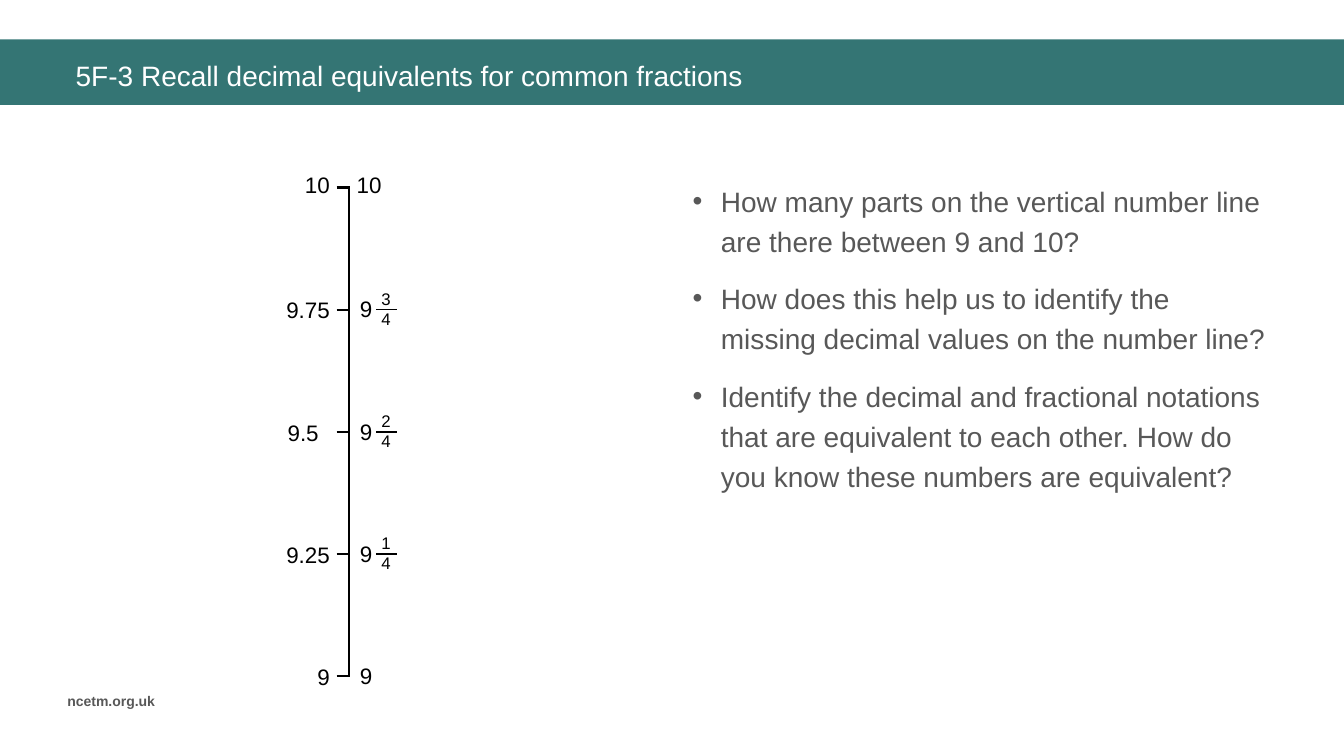
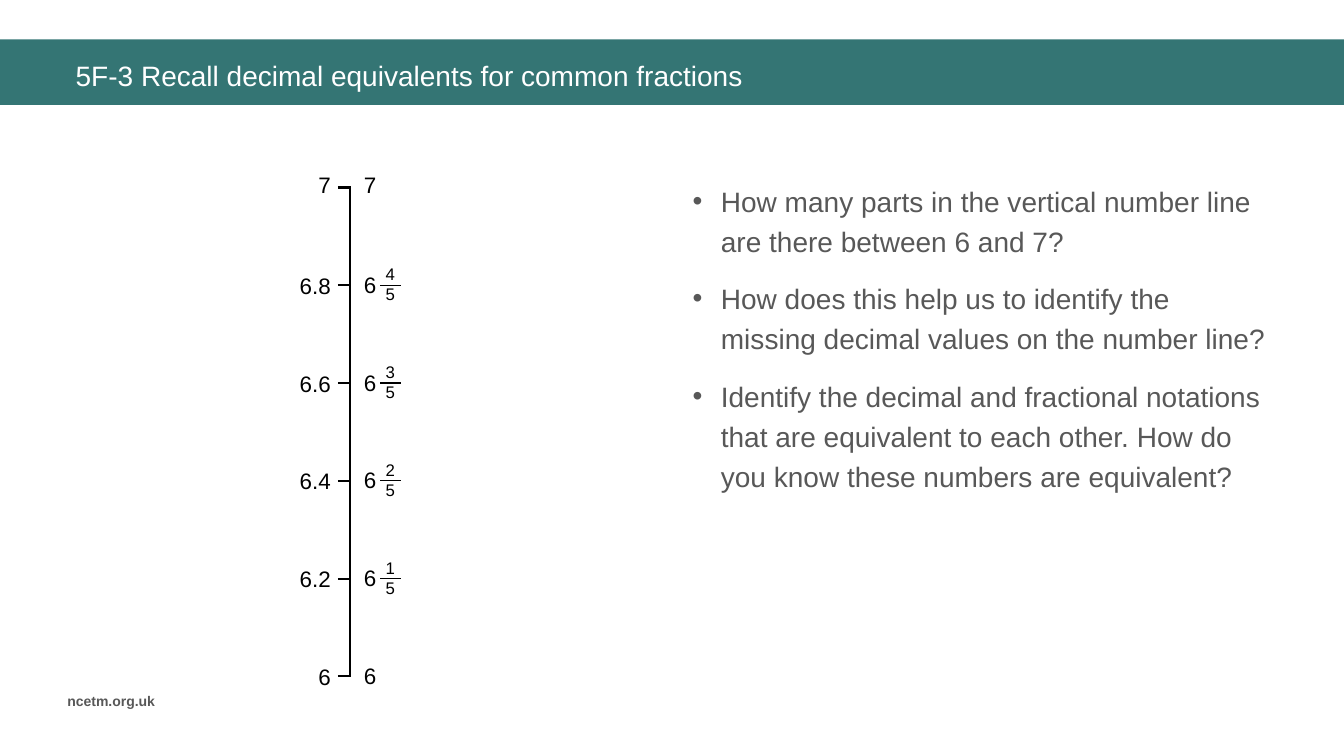
from lxml.etree import SubElement
from pptx import Presentation
from pptx.dml.color import RGBColor
from pptx.enum.shapes import MSO_CONNECTOR, MSO_SHAPE
from pptx.enum.text import MSO_ANCHOR, MSO_AUTO_SIZE, PP_ALIGN
from pptx.oxml.ns import qn
from pptx.util import Inches, Pt

TITLE = "5F-3 Recall decimal equivalents for common fractions"
FOOTER = "ncetm.org.uk"
SHARED_QUESTIONS = [
    "How does this help us to identify the missing decimal values on the number line?",
    "Identify the decimal and fractional notations that are equivalent to each other. "
    "How do you know these numbers are equivalent?",
]
# Decimals run from the top of the line to the bottom.
NUMBER_LINES = [
    {
        "question": "How many parts on the vertical number line are there between 9 and 10?",
        "decimals": ["10", "9.75", "9.5", "9.25", "9"],
        "axis": 3.46,
        "fraction_left": 3.6,
    },
    {
        "question": "How many parts in the vertical number line are there between 6 and 7?",
        "decimals": ["7", "6.8", "6.6", "6.4", "6.2", "6"],
        "axis": 3.47,
        "fraction_left": 3.64,
    },
]

WIDTH, HEIGHT = 13.33, 7.5
LINE_TOP, LINE_BOTTOM = 1.86, 6.71
TITLE_AREA = (0.65, 0.51, 12.32, 0.47)
BODY_AREA = (6.77, 1.71, 5.9, 4.49)
TEAL, WHITE, GREY, BLACK = "347574", "FFFFFF", "585858", "000000"

TITLE_STYLE = {"size": Pt(20), "color": WHITE}
BODY_STYLE = {"size": Pt(20), "color": GREY}
FOOTER_STYLE = {"size": Pt(10), "color": GREY, "bold": True}
NUMBER_STYLE = {"size": Pt(16), "color": BLACK}
FRACTION_STYLE = {"size": Pt(12), "color": BLACK}
BODY_SPACING = {"line_spacing": 1.2, "space_before": Pt(6), "space_after": Pt(6)}


def rgb(value):
    return RGBColor.from_string(value)


def place(shape, area):
    for side, length in zip(("left", "top", "width", "height"), area):
        setattr(shape, side, Inches(length))


def write(frame, lines, style, align=PP_ALIGN.LEFT):
    frame.text = "\n".join(lines)
    frame.auto_size = MSO_AUTO_SIZE.NONE
    for paragraph in frame.paragraphs:
        paragraph.alignment = align
        font = paragraph.runs[0].font
        for name, value in {"name": "Arial", **style}.items():
            if name == "color":
                font.color.rgb = rgb(value)
            else:
                setattr(font, name, value)


def add_label(slide, text, area, style, align=PP_ALIGN.LEFT):
    label = slide.shapes.add_textbox(*map(Inches, area))
    label.text_frame.word_wrap = True
    write(label.text_frame, [text], style, align)
    return label


def add_rule(slide, start, end, weight=1.5):
    rule = slide.shapes.add_connector(
        MSO_CONNECTOR.STRAIGHT, *map(Inches, (*start, *end)))
    rule.line.color.rgb = rgb(BLACK)
    rule.line.width = Pt(weight)
    SubElement(rule.element.spPr, qn("a:effectLst"))


def prepare_layout(layout, slide):
    """Move the band and footer from the slide to its layout, and place the placeholders."""
    band = slide.shapes.add_shape(
        MSO_SHAPE.RECTANGLE, *map(Inches, (0, 0.39, WIDTH, 0.65)))
    band.shadow.inherit = False
    band.fill.solid()
    band.fill.fore_color.rgb = rgb(TEAL)
    band.line.fill.background()
    footer = add_label(slide, FOOTER, (0.57, 6.82, 1.21, 0.27), FOOTER_STYLE)
    for index, part in enumerate((band, footer), start=2):
        layout.element.cSld.spTree.insert(index, part.element)
    place(layout.placeholders[0], TITLE_AREA)
    place(layout.placeholders[1], BODY_AREA)


def add_text(slide, question):
    title, body = slide.shapes.title, slide.placeholders[1]
    write(title.text_frame, [TITLE], TITLE_STYLE)
    title.text_frame.vertical_anchor = MSO_ANCHOR.MIDDLE
    write(body.text_frame, [question, *SHARED_QUESTIONS], BODY_STYLE)
    for position, paragraph in enumerate(body.text_frame.paragraphs):
        for name, value in BODY_SPACING.items():
            setattr(paragraph, name, value)
        if position == 0:
            paragraph.space_before = Pt(0)
        properties = paragraph._p.get_or_add_pPr()
        properties.set("marL", str(Inches(0.28)))
        properties.set("indent", str(Inches(-0.28)))


def add_fraction(slide, numerator, denominator, left, y):
    for number, rise in ((numerator, 0.26), (denominator, 0.06)):
        add_label(slide, str(number), (left, y - rise, 0.46, 0.3),
                  FRACTION_STYLE, PP_ALIGN.CENTER)
    add_rule(slide, (left + 0.13, y), (left + 0.34, y), weight=1)


def add_number_line(slide, decimals, axis, fraction_left):
    parts = len(decimals) - 1
    most_places = max(len(number.partition(".")[2]) for number in decimals)
    add_rule(slide, (axis, LINE_TOP - 0.01), (axis, LINE_BOTTOM + 0.01))
    for step, number in enumerate(decimals):
        y = LINE_TOP + (LINE_BOTTOM - LINE_TOP) * step / parts
        whole, _, places = number.partition(".")
        add_rule(slide, (axis - 0.12, y), (axis + 0.01, y))

        missing_places = most_places - len(places) if places else 0
        right = axis - 0.09 - 0.11 * missing_places
        rise = 0.18 if step else 0.21
        add_label(slide, number, (right - 0.9, y - rise, 0.9, 0.37),
                  NUMBER_STYLE, PP_ALIGN.RIGHT)

        whole_left = fraction_left - 0.13 - 0.03 * (len(whole) - 1)
        rise = 0.19 if step else 0.21
        add_label(slide, whole, (whole_left, y - rise, 0.5, 0.37), NUMBER_STYLE)
        if places:
            add_fraction(slide, parts - step, parts, fraction_left, y)


def main():
    deck = Presentation()
    deck.slide_width, deck.slide_height = Inches(WIDTH), Inches(HEIGHT)
    layout = deck.slide_layouts[1]
    for position, content in enumerate(NUMBER_LINES):
        slide = deck.slides.add_slide(layout)
        if position == 0:
            prepare_layout(layout, slide)
        add_text(slide, content["question"])
        add_number_line(slide, content["decimals"], content["axis"],
                        content["fraction_left"])
    deck.save("out.pptx")


if __name__ == "__main__":
    main()
